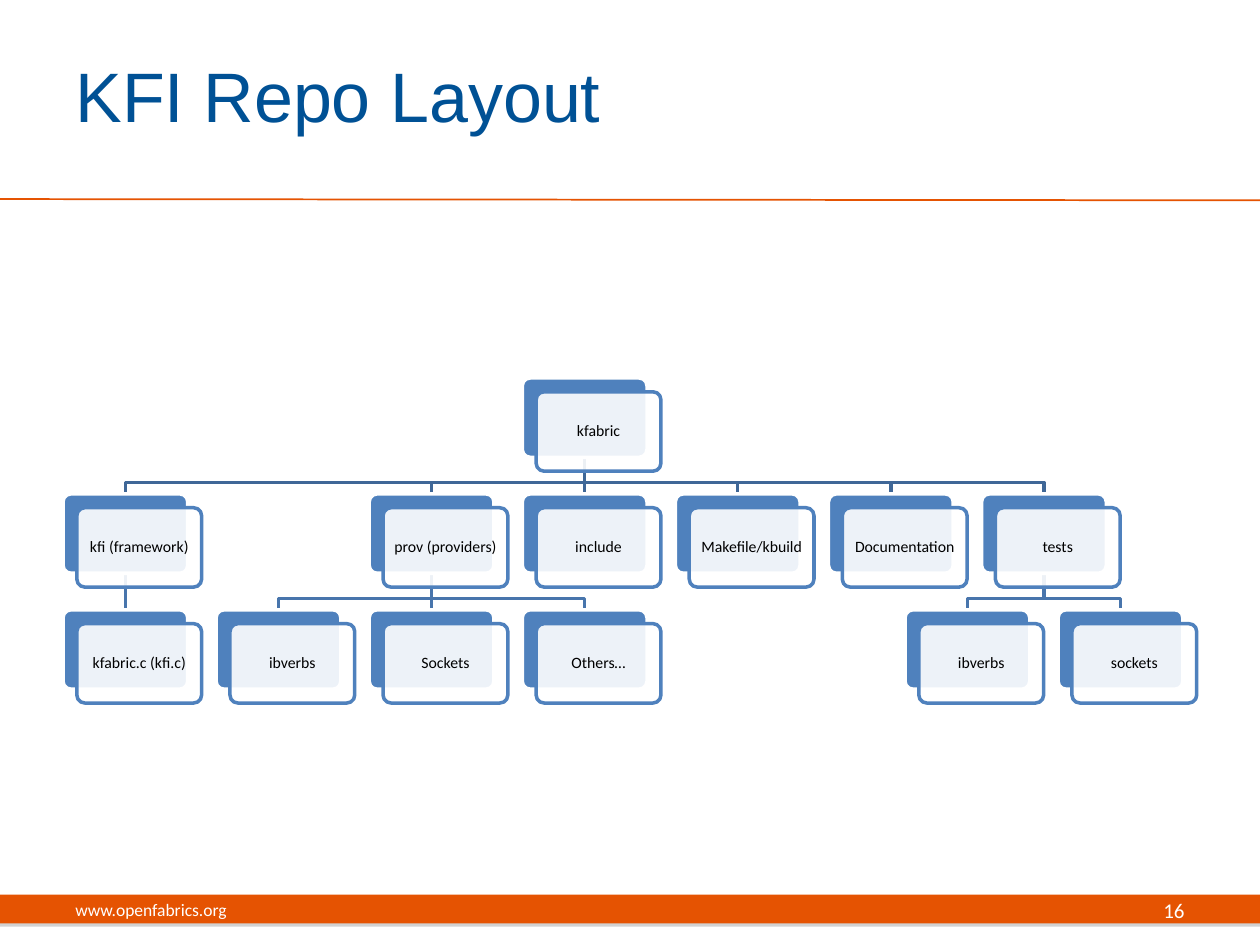
from lxml import etree
from pptx import Presentation
from pptx.dml.color import RGBColor
from pptx.enum.shapes import MSO_CONNECTOR, MSO_SHAPE
from pptx.enum.text import MSO_ANCHOR, PP_ALIGN
from pptx.oxml import parse_xml
from pptx.oxml.ns import nsdecls, qn
from pptx.util import Inches, Pt

STRAIGHT = MSO_CONNECTOR.STRAIGHT
RECTANGLE, ROUNDED = MSO_SHAPE.RECTANGLE, MSO_SHAPE.ROUNDED_RECTANGLE
MIDDLE = MSO_ANCHOR.MIDDLE
LEFT, CENTER, RIGHT = PP_ALIGN.LEFT, PP_ALIGN.CENTER, PP_ALIGN.RIGHT
BOTTOM_SIDE, TOP_SIDE = 2, 0

COLORS = {
    "orange": "E55302", "title": "005195", "card": "4F81BD",
    "upper_link": "3F6797", "lower_link": "4875AC",
    "white": "FFFFFF", "black": "000000",
}

CARD_WIDTH, CARD_HEIGHT, CARD_OFFSET = 0.99, 0.63, 0.11
TREE_LEFT, TREE_TOP = 0.5, 3
COLUMN_STEP, LEVEL_STEP = 1.215, 0.92
BEND_DROP = 0.2

# Each node: label, column, children
REPO_TREE = ("kfabric", 3, [
    ("kfi (framework)", 0, [("kfabric.c (kfi.c)", 0, [])]),
    ("prov (providers)", 2, [
        ("ibverbs", 1, []), ("Sockets", 2, []), ("Others…", 3, [])]),
    ("include", 3, []),
    ("Makefile/kbuild", 4, []),
    ("Documentation", 5, []),
    ("tests", 6, [("ibverbs", 5.5, []), ("sockets", 6.5, [])]),
])


def color(name):
    return RGBColor.from_string(COLORS[name])


def write_text(shape, text, size, color_name, align, font="Calibri"):
    frame = shape.text_frame
    frame.word_wrap = True
    frame.vertical_anchor = MIDDLE
    para = frame.paragraphs[0]
    para.text = text
    para.alignment = align
    para.font.size = Pt(size)
    para.font.name = font
    para.font.color.rgb = color(color_name)
    return para


def add_label(page, text, left, top, width, height, size, align):
    box = page.shapes.add_textbox(
        Inches(left), Inches(top), Inches(width), Inches(height))
    write_text(box, text, size, "white", align)


def add_line(page, x1, y1, x2, y2, color_name, width):
    line = page.shapes.add_connector(STRAIGHT, x1, y1, x2, y2)
    line.line.color.rgb = color(color_name)
    line.line.width = Pt(width)
    etree.SubElement(line.element.spPr, qn("a:effectLst"))
    return line


def add_card(page, left, top, fill_name, line_name):
    card = page.shapes.add_shape(
        ROUNDED, Inches(left), Inches(top),
        Inches(CARD_WIDTH), Inches(CARD_HEIGHT))
    card.adjustments[0] = 0.1
    card.shadow.inherit = False
    card.fill.solid()
    card.fill.fore_color.rgb = color(fill_name)
    card.line.color.rgb = color(line_name)
    card.line.width = Pt(2)
    return card


def add_node(page, label, column, level):
    """Draw a blue card with a translucent labelled card over it; return the blue one."""
    left = TREE_LEFT + column * COLUMN_STEP
    top = TREE_TOP + level * LEVEL_STEP
    back = add_card(page, left, top, "card", "white")
    front = add_card(page, left + CARD_OFFSET, top + CARD_OFFSET, "white", "card")
    fill_color = front.fill._xPr.find(qn("a:solidFill"))[0]
    etree.SubElement(fill_color, qn("a:alpha"), val="90000")
    para = write_text(front, label, 9, "black", CENTER)
    para.line_spacing = 0.9
    frame = front.text_frame
    frame.margin_left = frame.margin_right = Inches(0.05)
    frame.margin_top = frame.margin_bottom = Inches(0.05)
    return back


def add_link(page, parent, child, color_name):
    """Join two cards: a straight line in one column, otherwise a bent one."""
    x1, y1 = parent.left + parent.width // 2, parent.top + parent.height
    x2, y2 = child.left + child.width // 2, child.top
    if x1 == x2:
        link = add_line(page, x1, y1, x2, y2, color_name, 2)
        link.begin_connect(parent, BOTTOM_SIDE)
        link.end_connect(child, TOP_SIDE)
        return link
    bend = y1 + Inches(BEND_DROP)
    builder = page.shapes.build_freeform(x1, y1)
    builder.add_line_segments([(x1, bend), (x2, bend), (x2, y2)], close=False)
    link = builder.convert_to_shape()
    link.shadow.inherit = False
    link.fill.background()
    link.line.color.rgb = color(color_name)
    link.line.width = Pt(2)
    return link


def add_tree(page, node, level=0):
    """Draw a node and its descendants; return its card and all links below it."""
    label, column, children = node
    card = add_node(page, label, column, level)
    links = []
    for child in children:
        child_card, child_links = add_tree(page, child, level + 1)
        link_color = "upper_link" if level == 0 else "lower_link"
        links += child_links + [add_link(page, card, child_card, link_color)]
    return card, links


def add_footer_bar(page):
    bar = page.shapes.add_shape(
        RECTANGLE, Inches(0), Inches(7.1), Inches(10), Inches(0.23))
    bar.fill.solid()
    bar.fill.fore_color.rgb = color("orange")
    bar.line.fill.background()
    bar.element.spPr.append(parse_xml(
        f'<a:effectLst {nsdecls("a")}>'
        '<a:outerShdw blurRad="0" dist="22860" dir="5400000" rotWithShape="0">'
        '<a:srgbClr val="808080"><a:alpha val="35000"/></a:srgbClr>'
        '</a:outerShdw></a:effectLst>'))


def add_title(page, text):
    title = page.shapes.title
    title.left, title.top = Inches(0.5), Inches(0.25)
    title.width, title.height = Inches(8.17), Inches(1)
    write_text(title, text, 40, "title", LEFT, font="Arial")


def main():
    deck = Presentation()
    deck.slide_width, deck.slide_height = Inches(10), Inches(7.5)
    page = deck.slides.add_slide(deck.slide_layouts[5])

    add_footer_bar(page)
    add_line(page, Inches(0), Inches(1.58), Inches(10), Inches(1.59), "orange", 1)
    add_title(page, "KFI Repo Layout")

    root_card, links = add_tree(page, REPO_TREE)
    for link in links:  # links lie behind every card
        root_card.element.addprevious(link.element)

    add_label(page, "www.openfabrics.org", 0.5, 7.02, 3.17, 0.4, 10, LEFT)
    add_label(page, "16", 7.17, 7.02, 2.33, 0.4, 12, RIGHT)
    deck.save("out.pptx")


if __name__ == "__main__":
    main()
